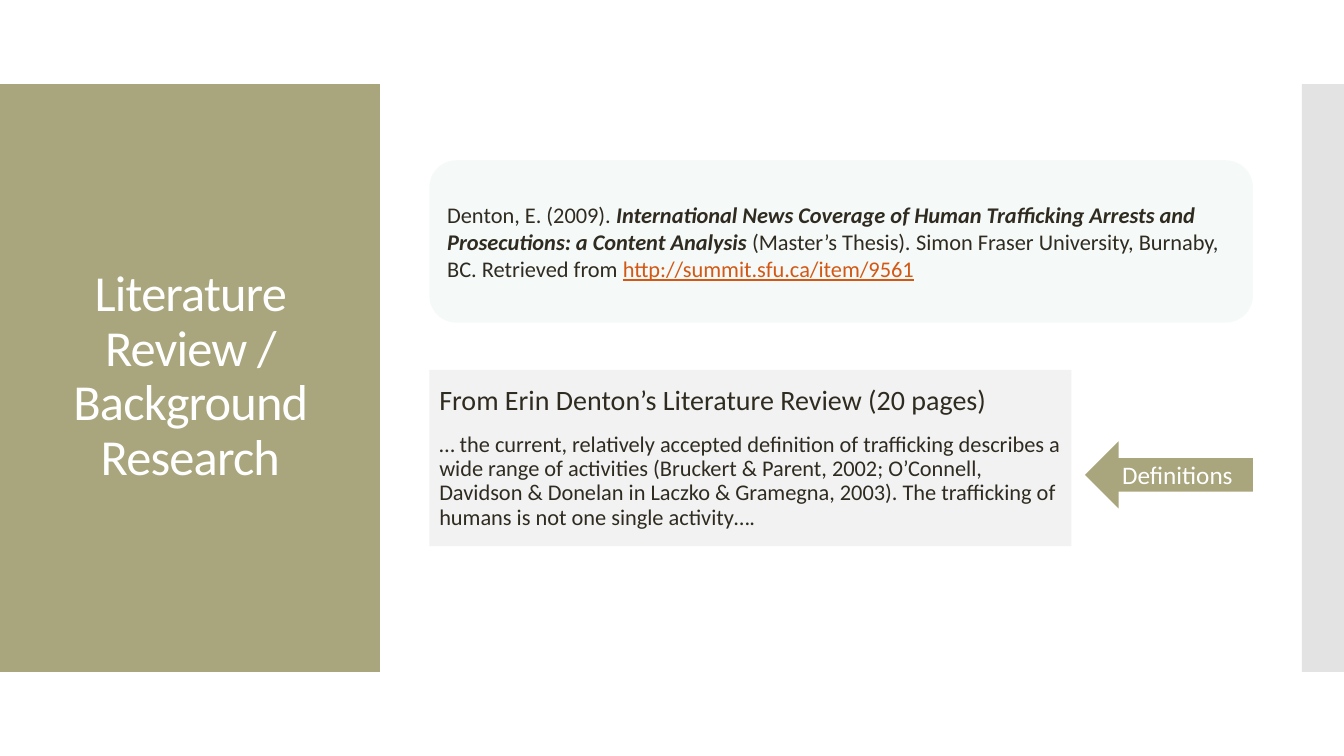
from lxml.etree import SubElement
from pptx import Presentation
from pptx.dml.color import RGBColor
from pptx.enum.shapes import MSO_SHAPE
from pptx.enum.text import MSO_ANCHOR, PP_ALIGN
from pptx.oxml.ns import qn
from pptx.util import Pt

# Content
OLIVE, INK, WHITE, ORANGE = "A9A57C", "2F2B20", "FFFFFF", "D25814"

TITLE = [[("Literature Review / Background Research", {})]]
CITATION = [[
    ("Denton, E. (2009). ", {}),
    ("International News Coverage of Human Trafficking Arrests and "
     "Prosecutions: a Content Analysis ", {"bold": True, "italic": True}),
    ("(Master’s Thesis)", {}),
    (".", {"italic": True}),
    (" Simon Fraser University, Burnaby, BC. Retrieved from ", {}),
    ("http://summit.sfu.ca/item/9561", {"color": ORANGE, "underline": True}),
]]
EXCERPT = [
    [("From Erin Denton’s Literature Review (20 pages)", {"size": Pt(20)})],
    [("… the current, relatively accepted definition of trafficking describes "
      "a wide range of activities (Bruckert & Parent, 2002; O’Connell, "
      "Davidson & Donelan in Laczko & Gramegna, 2003). The trafficking of "
      "humans is not one single activity….", {})],
]
LABEL = [[("Definitions", {})]]

# Layout in points
SLIDE_W, SLIDE_H = 960, 540
BAND_TOP, BAND_H = 60, 420
PANEL_W, STRIP_W = 271.4, 30
LEFT, RIGHT = 306.7, 895
ARROW_W = 120

prs = Presentation()
prs.slide_width, prs.slide_height = Pt(SLIDE_W), Pt(SLIDE_H)
s = prs.slides.add_slide(prs.slide_layouts[6])


def rgb(value):
    return RGBColor.from_string(value)


def add_box(kind, x, y, w, h, fill):
    sp = s.shapes.add_shape(kind, Pt(x), Pt(y), Pt(w), Pt(h))
    sp.shadow.inherit = False
    sp.line.fill.background()
    sp.fill.solid()
    sp.fill.fore_color.rgb = rgb(fill)
    return sp


def add_text(sp, paragraphs, size, color, para_format):
    tf = sp.text_frame
    tf.word_wrap = True
    tf.vertical_anchor = MSO_ANCHOR.MIDDLE
    for i, runs in enumerate(paragraphs):
        p = tf.paragraphs[0] if i == 0 else tf.add_paragraph()
        for name, value in para_format.items():
            setattr(p, name, value)
        for text, changes in runs:
            r = p.add_run()
            r.text = text
            font = {"name": "Calibri", "size": Pt(size), "color": color} | changes
            r.font.color.rgb = rgb(font.pop("color"))
            for name, value in font.items():
                setattr(r.font, name, value)


# Side panel and half-transparent strip
add_box(MSO_SHAPE.RECTANGLE, 0, BAND_TOP, PANEL_W, BAND_H, OLIVE)
strip = add_box(MSO_SHAPE.RECTANGLE, SLIDE_W - STRIP_W, BAND_TOP,
                STRIP_W, BAND_H, "C8C8C8")
strip_color = next(strip._element.spPr.iter(qn("a:srgbClr")))
SubElement(strip_color, qn("a:alpha"), val="50000")

# Title with tightened letters
title = s.shapes.add_textbox(Pt(20), Pt(88.5), Pt(232), Pt(362))
add_text(title, TITLE, 36, WHITE,
         {"alignment": PP_ALIGN.CENTER, "line_spacing": 0.9})
title.text_frame.paragraphs[0].runs[0]._r.get_or_add_rPr().set("spc", "-60")

# Excerpt, citation and arrow
excerpt = add_box(MSO_SHAPE.RECTANGLE, LEFT, 264.2, 458.6, 126, "F2F2F2")
add_text(excerpt, EXCERPT, 16, INK,
         {"alignment": PP_ALIGN.LEFT, "line_spacing": 0.9, "space_before": Pt(12)})

citation = add_box(MSO_SHAPE.ROUNDED_RECTANGLE, LEFT, 114.5,
                   RIGHT - LEFT, 116, "F5F9F8")
add_text(citation, CITATION, 16, INK, {"alignment": PP_ALIGN.LEFT})

arrow = add_box(MSO_SHAPE.LEFT_ARROW, RIGHT - ARROW_W, 315.2, ARROW_W, 48, OLIVE)
add_text(arrow, LABEL, 18, WHITE, {"alignment": PP_ALIGN.CENTER})

prs.save("out.pptx")
